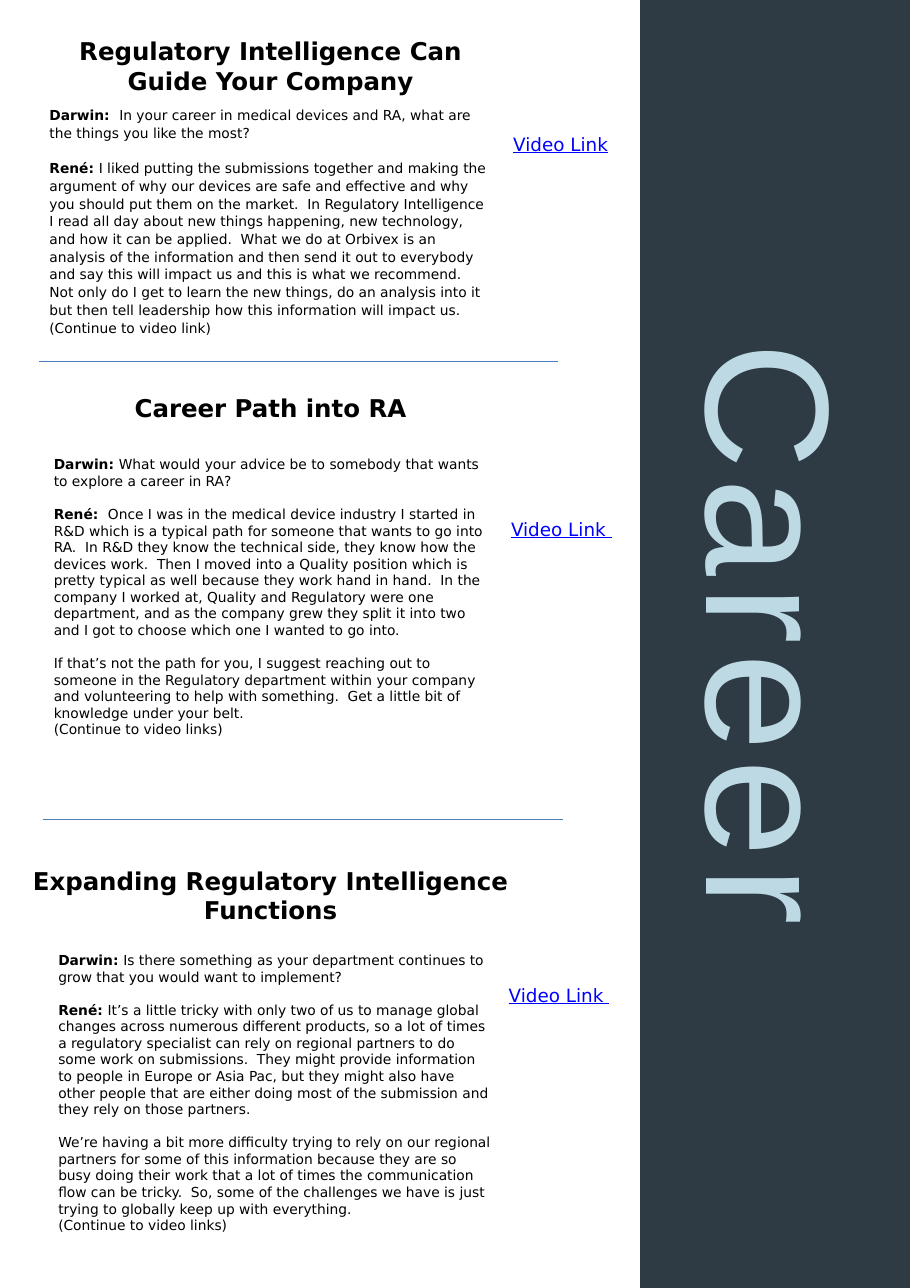
from lxml import etree
from pptx import Presentation
from pptx.dml.color import RGBColor
from pptx.enum.shapes import MSO_CONNECTOR, MSO_SHAPE
from pptx.enum.text import MSO_ANCHOR, MSO_AUTO_SIZE, PP_ALIGN
from pptx.oxml.ns import qn
from pptx.util import Pt

STRAIGHT = MSO_CONNECTOR.STRAIGHT
RECTANGLE = MSO_SHAPE.RECTANGLE
TOP = MSO_ANCHOR.TOP
NO_FIT = MSO_AUTO_SIZE.NONE
CENTER, LEFT = PP_ALIGN.CENTER, PP_ALIGN.LEFT

FONT = "DejaVu Sans"
BLACK, LINK, RULE = "000000", "0000FF", "4B7EBC"
NAVY, PALE = "2E3B45", "BDDAE4"
PAGE_W, PAGE_H = 594.72, 841.68
SIDEBAR_X = 418.3
SIDEBAR_TEXT = "Career"
SIDEBAR_BOX = (447.1, 10.8, 136.1, 807.1)
HEADING_CENTER = 176.8
RULE_W = 339.8

SECTIONS = [
    {
        "heading": "Regulatory Intelligence Can Guide Your Company",
        "heading_box": (20.2, 314.6, 46),
        "body_box": (25.2, 65.5, 303.1, 170),
        "link": "Video Link",
        "link_at": (328.3, 83.5),
        "spacing": 1.07,
        "gap": 11.6,
        "body": [
            ("Darwin:  ", "In your career in medical devices and RA, what are the things you like the most?", False),
            ("René: ", "I liked putting the submissions together and making the argument of why our devices are safe and effective and why you should put them on the market.  In Regulatory Intelligence I read all day about new things happening, new technology, and how it can be applied.  What we do at Orbivex is an analysis of the information and then send it out to everybody and say this will impact us and this is what we recommend.  Not only do I get to learn the new things, do an analysis into it but then tell leadership how this information will impact us.", True),
            ("", "(Continue to video link)", False),
        ],
    },
    {
        "heading": "Career Path into RA",
        "heading_box": (253.4, 344.2, 26.6),
        "body_box": (28.1, 294.5, 297.4, 193),
        "link": "Video Link ",
        "link_at": (326.9, 334.8),
        "spacing": 1.0,
        "gap": 10.8,
        "body": [
            ("Darwin: ", "What would your advice be to somebody that wants to explore a career in RA?", False),
            ("René:  ", "Once I was in the medical device industry I started in R&D which is a typical path for someone that wants to go into RA.  In R&D they know the technical side, they know how the devices work.  Then I moved into a Quality position which is pretty typical as well because they work hand in hand.  In the company I worked at, Quality and Regulatory were one department, and as the company grew they split it into two and I got to choose which one I wanted to go into.", True),
            ("", "If that’s not the path for you, I suggest reaching out to someone in the Regulatory department within your company and volunteering to help with something.  Get a little bit of knowledge under your belt.", True),
            ("", "(Continue to video links)", False),
        ],
    },
    {
        "heading": "Expanding Regulatory Intelligence Functions",
        "heading_box": (562.3, 344.2, 46),
        "body_box": (31, 618.5, 297.4, 203.8),
        "link": "Video Link ",
        "link_at": (325.4, 639.4),
        "spacing": 1.0,
        "gap": 10.8,
        "body": [
            ("Darwin: ", "Is there something as your department continues to grow that you would want to implement?", False),
            ("René: ", "It’s a little tricky with only two of us to manage global changes across numerous different products, so a lot of times a regulatory specialist can rely on regional partners to do some work on submissions.  They might provide information to people in Europe or Asia Pac, but they might also have other people that are either doing most of the submission and they rely on those partners.", True),
            ("", "We’re having a bit more difficulty trying to rely on our regional partners for some of this information because they are so busy doing their work that a lot of times the communication flow can be tricky.  So, some of the challenges we have is just trying to globally keep up with everything.", True),
            ("", "(Continue to video links)", False),
        ],
    },
]
RULES = [(25.2, 236.2), (28.1, 535.7)]


def rgb(value):
    return RGBColor.from_string(value)


def style(r, size, color=BLACK, bold=False, name=FONT):
    r.font.name = name
    r.font.size = Pt(size)
    r.font.bold = bold
    r.font.color.rgb = rgb(color)


def add_text(slide, x, y, w, h):
    tf = slide.shapes.add_textbox(Pt(x), Pt(y), Pt(w), Pt(h)).text_frame
    tf.word_wrap = True
    return tf


def place_title(slide, x, y, w, h):
    title = slide.shapes.title
    title.left, title.top, title.width, title.height = Pt(x), Pt(y), Pt(w), Pt(h)
    tf = title.text_frame
    tf.auto_size = NO_FIT
    tf.word_wrap = True
    tf.vertical_anchor = TOP
    return tf


def set_line(tf, text, size, color=BLACK, bold=False, align=LEFT, name=FONT):
    p = tf.paragraphs[0]
    p.text = text
    p.alignment = align
    style(p.runs[0], size, color, bold, name)
    return p


def add_sidebar(slide):
    sp = slide.shapes.add_shape(
        RECTANGLE, Pt(SIDEBAR_X), 0, Pt(PAGE_W - SIDEBAR_X), Pt(PAGE_H))
    sp.shadow.inherit = False
    sp.fill.solid()
    sp.fill.fore_color.rgb = rgb(NAVY)
    sp.line.fill.background()

    tf = add_text(slide, *SIDEBAR_BOX)
    tf.auto_size = NO_FIT
    tf.margin_left = tf.margin_right = tf.margin_top = tf.margin_bottom = 0
    tf._txBody.bodyPr.set("vert", "vert")
    p = set_line(tf, SIDEBAR_TEXT, 115, PALE, align=CENTER, name="Arial")
    p.line_spacing = Pt(144.7)
    p.runs[0].font._element.set("spc", "580")


def add_section(slide, section, place_heading):
    y, w, h = section["heading_box"]
    tf = place_heading(slide, HEADING_CENTER - w / 2, y, w, h)
    set_line(tf, section["heading"], 16, bold=True, align=CENTER)

    tf = add_text(slide, *section["body_box"])
    for i, (speaker, words, spaced) in enumerate(section["body"]):
        p = tf.add_paragraph() if i else tf.paragraphs[0]
        p.line_spacing = section["spacing"]
        if spaced:
            p.space_before = Pt(section["gap"])
        for text, bold in ((speaker, True), (words, False)):
            if text:
                r = p.add_run()
                r.text = text
                style(r, 9, bold=bold)

    tf = add_text(slide, *section["link_at"], 92.9, 21.6)
    p = set_line(tf, section["link"], 12, LINK)
    p.runs[0].font.underline = True


def add_rule(slide, x, y):
    rule = slide.shapes.add_connector(STRAIGHT, Pt(x), Pt(y), Pt(x + RULE_W), Pt(y))
    rule.line.color.rgb = rgb(RULE)
    rule.line.width = Pt(0.75)
    etree.SubElement(rule.element.spPr, qn("a:effectLst"))


def main():
    prs = Presentation()
    prs.slide_width, prs.slide_height = Pt(PAGE_W), Pt(PAGE_H)
    slide = prs.slides.add_slide(prs.slide_layouts[5])
    add_sidebar(slide)
    for i, section in enumerate(SECTIONS):
        add_section(slide, section, add_text if i else place_title)
    for x, y in RULES:
        add_rule(slide, x, y)
    prs.save("out.pptx")


if __name__ == "__main__":
    main()
